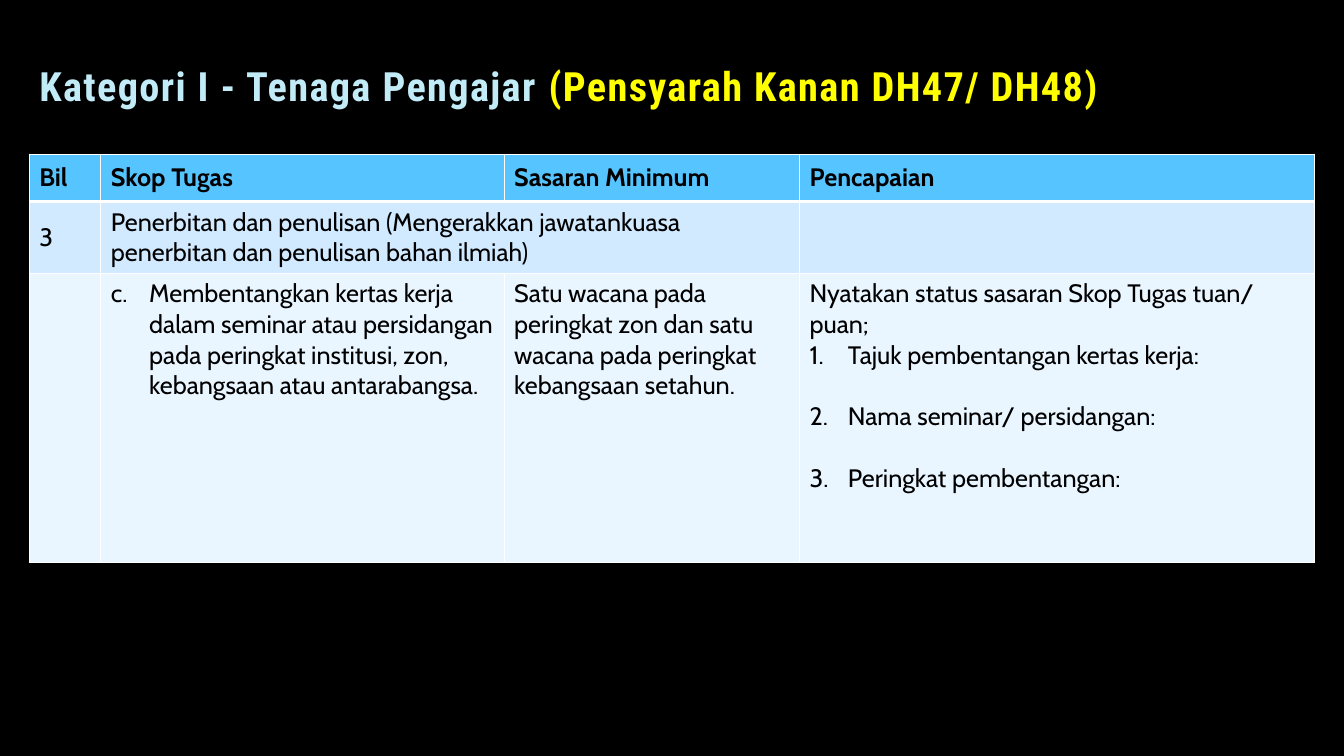
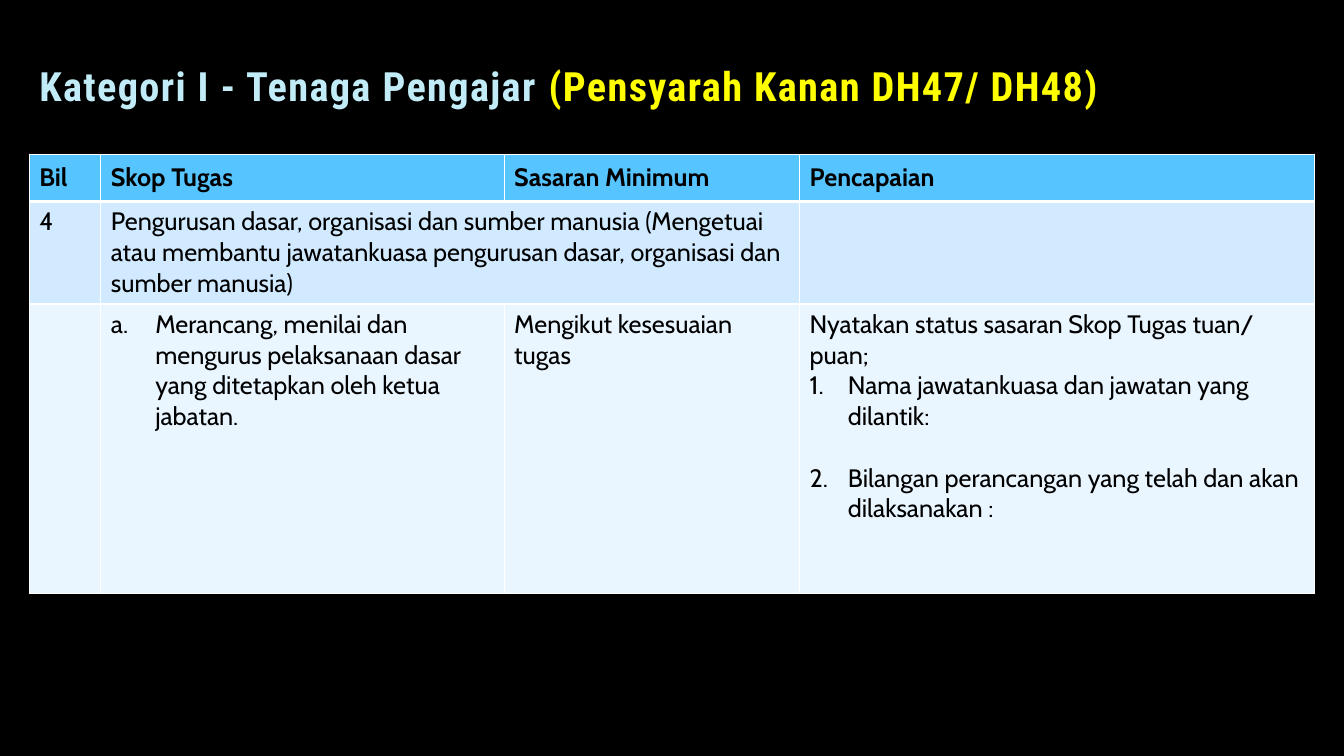
from pptx import Presentation
from pptx.dml.color import RGBColor
from pptx.enum.text import MSO_ANCHOR, MSO_AUTO_SIZE, PP_ALIGN
from pptx.oxml import parse_xml
from pptx.oxml.ns import nsdecls
from pptx.util import Inches, Pt

COLORS = {
    "background": "000000",
    "text": "000000",
    "title": "C1EBF7",
    "accent": "FFFF00",
    "outline": "404040",
    "border": "FFFFFF",
    "header": "56C5FF",
    "topic": "D1EAFF",
    "detail": "E9F5FF",
}
TITLE_FONT = "Roboto Condensed"
TABLE_FONT = "Cabin"
TITLE_PARTS = [
    ("Kategori I - Tenaga Pengajar ", "title"),
    ("(Pensyarah Kanan DH47/ DH48)", "accent"),
]
HEADINGS = ["Bil", "Skop Tugas", "Sasaran Minimum", "Pencapaian"]
STATUS = "Nyatakan status sasaran Skop Tugas tuan/ puan;"
COLUMN_WIDTHS = [0.71, 4, 2.93, 5.11]
HEADER_HEIGHT = 0.47
DETAIL_HEIGHT = 2.87
ITEM_INDENT = 0.38
ITEM_GAP = 22

TOPICS = [
    {
        "number": "3",
        "topic": "Penerbitan dan penulisan (Mengerakkan jawatankuasa penerbitan dan penulisan bahan ilmiah)",
        "topic_height": 0.71,
        "anchor": MSO_ANCHOR.MIDDLE,
        "task": "Membentangkan kertas kerja dalam seminar atau persidangan pada peringkat institusi, zon, kebangsaan atau antarabangsa.",
        "task_start": 3,
        "task_indent": 0.38,
        "target": "Satu wacana pada peringkat zon dan satu wacana pada peringkat kebangsaan setahun.",
        "items": [
            "Tajuk pembentangan kertas kerja:",
            "Nama seminar/ persidangan:",
            "Peringkat pembentangan:",
        ],
    },
    {
        "number": "4",
        "topic": "Pengurusan dasar, organisasi dan sumber manusia (Mengetuai atau membantu jawatankuasa pengurusan dasar, organisasi dan sumber manusia)",
        "topic_height": 1.01,
        "anchor": MSO_ANCHOR.TOP,
        "task": "Merancang, menilai dan mengurus pelaksanaan dasar yang ditetapkan oleh ketua jabatan.",
        "task_start": 1,
        "task_indent": 0.44,
        "target": "Mengikut kesesuaian tugas",
        "items": [
            "Nama jawatankuasa dan jawatan yang dilantik:",
            "Bilangan perancangan yang telah dan akan dilaksanakan :",
        ],
    },
]


def color(name):
    return RGBColor.from_string(COLORS[name])


def format_span(span, font_name, size, color_name, bold):
    span.font.name = font_name
    span.font.size = Pt(size)
    span.font.bold = bold
    span.font.color.rgb = color(color_name)


def outline_span(span):
    properties = span._r.get_or_add_rPr()
    properties.set("spc", "100")
    properties.insert(0, parse_xml(
        f'<a:ln {nsdecls("a")} w="{Pt(0.75)}"><a:solidFill>'
        f'<a:srgbClr val="{COLORS["outline"]}"><a:alpha val="10000"/></a:srgbClr>'
        '</a:solidFill><a:prstDash val="solid"/></a:ln>'))


def add_title(page):
    title = page.shapes.title
    title.left, title.top = Inches(0.29), Inches(0.47)
    title.width, title.height = Inches(11.37), Inches(0.67)
    frame = title.text_frame
    frame.word_wrap = True
    frame.auto_size = MSO_AUTO_SIZE.NONE
    frame.vertical_anchor = MSO_ANCHOR.BOTTOM
    para = frame.paragraphs[0]
    para.alignment = PP_ALIGN.LEFT
    para.line_spacing = 0.9
    for text, color_name in TITLE_PARTS:
        span = para.add_run()
        span.text = text
        outline_span(span)
        format_span(span, TITLE_FONT, 28.8, color_name, True)


def number_paragraph(para, scheme, indent, start=1):
    properties = para._p.get_or_add_pPr()
    properties.set("marL", str(Inches(indent)))
    properties.set("indent", str(-Inches(indent)))
    start_at = f' startAt="{start}"' if start > 1 else ""
    properties.append(parse_xml(f'<a:buFont {nsdecls("a")} typeface="+mj-lt"/>'))
    properties.append(parse_xml(
        f'<a:buAutoNum {nsdecls("a")} type="{scheme}"{start_at}/>'))


def set_borders(cell, top, bottom):
    properties = cell._tc.get_or_add_tcPr()
    widths = {"lnL": 1, "lnR": 1, "lnT": top, "lnB": bottom}
    for index, (side, width) in enumerate(widths.items()):
        properties.insert(index, parse_xml(
            f'<a:{side} {nsdecls("a")} w="{Pt(width)}"><a:solidFill>'
            f'<a:srgbClr val="{COLORS["border"]}"/></a:solidFill></a:{side}>'))


def fill_row(table, row, texts, fill_name, anchor, top=1, bottom=1):
    for column, text in enumerate(texts):
        cell = table.cell(row, column)
        cell.fill.solid()
        cell.fill.fore_color.rgb = color(fill_name)
        cell.vertical_anchor = anchor
        set_borders(cell, top, bottom)
        if text:
            cell.text_frame.text = text
            for para in cell.text_frame.paragraphs:
                format_span(para.runs[0], TABLE_FONT, 18, "text", row == 0)


def add_topic_table(page, topic):
    heights = [HEADER_HEIGHT, topic["topic_height"], DETAIL_HEIGHT]
    table = page.shapes.add_table(
        len(heights), len(COLUMN_WIDTHS), Inches(0.29), Inches(1.53),
        Inches(sum(COLUMN_WIDTHS)), Inches(sum(heights))).table
    for column, width in zip(table.columns, COLUMN_WIDTHS):
        column.width = Inches(width)
    for row, height in zip(table.rows, heights):
        row.height = Inches(height)

    table.cell(1, 1).merge(table.cell(1, 2))
    achievement = "\n".join([STATUS, *topic["items"]])
    fill_row(table, 0, HEADINGS, "header", MSO_ANCHOR.MIDDLE, bottom=3)
    fill_row(table, 1, [topic["number"], topic["topic"], "", ""], "topic",
             topic["anchor"], top=3)
    fill_row(table, 2, ["", topic["task"], topic["target"], achievement],
             "detail", MSO_ANCHOR.TOP)

    task = table.cell(2, 1).text_frame.paragraphs[0]
    number_paragraph(task, "alphaLcPeriod", topic["task_indent"], topic["task_start"])
    items = table.cell(2, 3).text_frame.paragraphs[1:]
    for index, para in enumerate(items):
        para.space_before = Pt(ITEM_GAP if index else 0)
        number_paragraph(para, "arabicPeriod", ITEM_INDENT)


def main():
    deck = Presentation()
    deck.slide_width, deck.slide_height = Inches(13.33), Inches(7.5)
    background = deck.slide_master.background.fill
    background.solid()
    background.fore_color.rgb = color("background")
    for topic in TOPICS:
        page = deck.slides.add_slide(deck.slide_layouts[5])
        add_title(page)
        add_topic_table(page, topic)
    deck.save("out.pptx")


if __name__ == "__main__":
    main()
